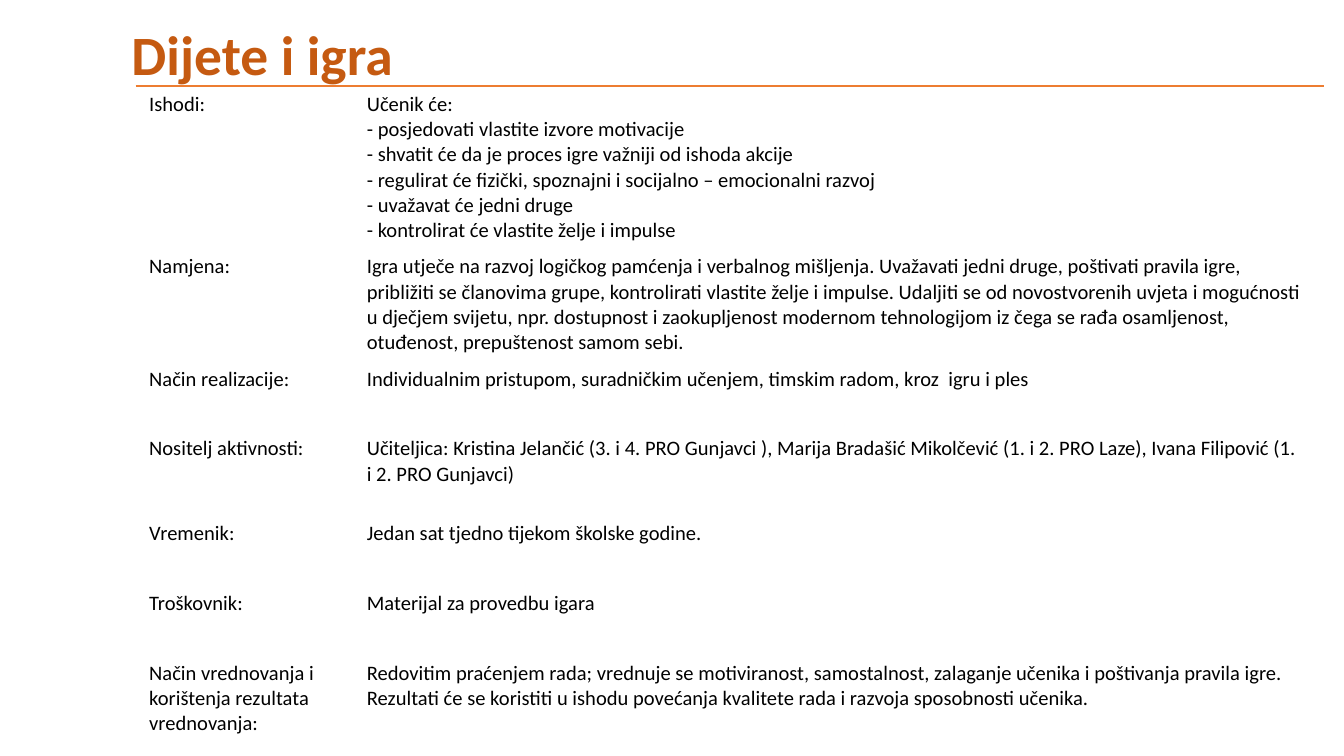
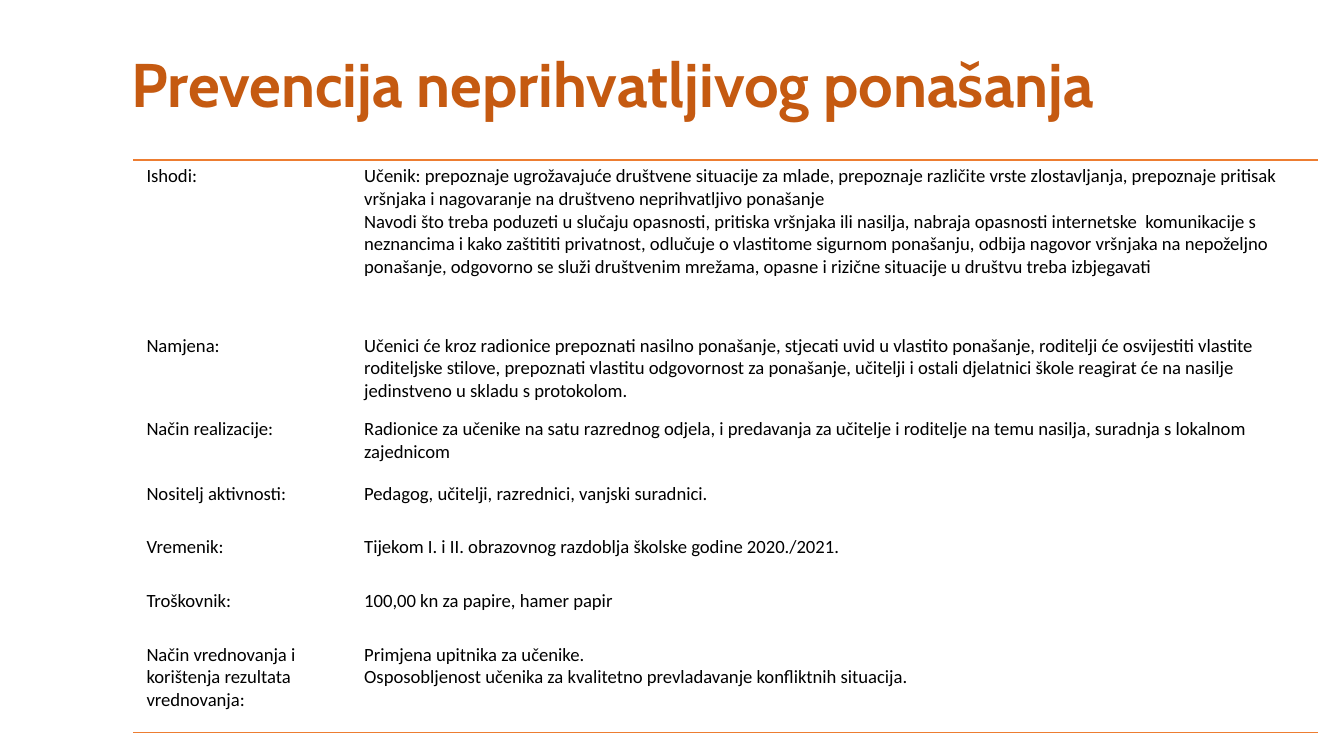
"""Build two school activity plan slides, each a title above a ruled table."""
from lxml import etree
from pptx import Presentation
from pptx import util as u
from pptx.dml.color import RGBColor
from pptx.enum import text
from pptx.oxml import ns

RUST = RGBColor(0xC5, 0x5A, 0x11)
ORANGE = RGBColor(0xED, 0x7D, 0x31)
BLACK = RGBColor(0, 0, 0)
BODY_FONT = "Calibri"
LABEL_WIDTH = 1.62
PLAIN_TABLE_STYLE = "{2D5ABB26-0587-4C30-8999-92F81FD0307C}"
NBSP = chr(160)

LABELS = [
    "Ishodi:",
    "Namjena:",
    "Način realizacije:",
    "Nositelj aktivnosti:",
    "Vremenik:",
    "Troškovnik:",
    "Način vrednovanja i korištenja rezultata vrednovanja:",
]

PLAY_DETAILS = [
    "Učenik će:\n"
    "- posjedovati vlastite izvore motivacije\n"
    "- shvatit će da je proces igre važniji od ishoda akcije\n"
    "- regulirat će fizički, spoznajni i socijalno – emocionalni razvoj\n"
    "- uvažavat će jedni druge\n"
    "- kontrolirat će vlastite želje i impulse",
    "Igra utječe na razvoj logičkog pamćenja i verbalnog mišljenja. Uvažavati jedni druge, "
    "poštivati pravila igre, približiti se članovima grupe, kontrolirati vlastite želje i impulse. "
    "Udaljiti se od novostvorenih uvjeta i mogućnosti u dječjem svijetu, npr. dostupnost i "
    "zaokupljenost modernom tehnologijom iz čega se rađa osamljenost, otuđenost, prepuštenost "
    "samom sebi.",
    "Individualnim pristupom, suradničkim učenjem, timskim radom, "
    f"kroz{NBSP} igru i ples",
    f"Učiteljica: Kristina Jelančić (3. i{NBSP}4. PRO Gunjavci ), Marija Bradašić Mikolčević "
    f"(1. i 2. PRO Laze), Ivana Filipović (1. i{NBSP}2. PRO Gunjavci)",
    "Jedan sat tjedno tijekom školske godine.",
    f"Materijal za provedbu{NBSP}igara",
    "Redovitim praćenjem rada; vrednuje se motiviranost, samostalnost, zalaganje učenika i "
    "poštivanja pravila igre.\n"
    "Rezultati će se koristiti u ishodu povećanja kvalitete rada i razvoja sposobnosti učenika.",
]

PREVENTION_DETAILS = [
    "Učenik: prepoznaje ugrožavajuće društvene situacije za mlade, prepoznaje različite vrste "
    "zlostavljanja, prepoznaje pritisak vršnjaka i nagovaranje na društveno neprihvatljivo ponašanje\n"
    "Navodi što treba poduzeti u slučaju opasnosti, pritiska vršnjaka ili nasilja, nabraja opasnosti "
    f"internetske{NBSP} komunikacije s neznancima i kako zaštititi privatnost,{NBSP}odlučuje o "
    "vlastitome sigurnom ponašanju, odbija nagovor vršnjaka na nepoželjno "
    f"ponašanje,{NBSP}odgovorno se služi društvenim mrežama, opasne i rizične situacije u društvu "
    "treba izbjegavati",
    "Učenici će kroz radionice prepoznati nasilno ponašanje, stjecati uvid u vlastito ponašanje, "
    "roditelji će osvijestiti vlastite roditeljske stilove, prepoznati vlastitu odgovornost za "
    "ponašanje, učitelji i ostali djelatnici škole reagirat će na nasilje jedinstveno u skladu s "
    "protokolom.",
    "Radionice za učenike na satu razrednog odjela, i predavanja za učitelje i roditelje na temu "
    "nasilja, suradnja s lokalnom zajednicom",
    "Pedagog, učitelji, razrednici, vanjski suradnici.",
    "Tijekom I. i II. obrazovnog razdoblja školske godine 2020./2021.",
    "100,00 kn za papire, hamer papir",
    "Primjena upitnika za učenike.\n"
    "Osposobljenost učenika za kvalitetno prevladavanje konfliktnih situacija.",
]


def style_font(paragraph, name, size, color, bold=False):
    """Set the font of a whole paragraph."""
    font = paragraph.font
    font.name, font.size, font.bold = name, u.Pt(size), bold
    font.color.rgb = color


def add_title(slide, wording, top, height, font_name, size):
    """Add the bold rust-coloured heading."""
    heading = slide.shapes.add_textbox(
        u.Inches(0.88), u.Inches(top), u.Inches(8.62), u.Inches(height)).text_frame
    heading.word_wrap = True
    heading.vertical_anchor = text.MSO_ANCHOR.MIDDLE
    heading.text = wording
    heading.paragraphs[0].line_spacing = 0.9
    style_font(heading.paragraphs[0], font_name, size, RUST, bold=True)


def add_rule(cell, edge):
    """Draw an orange line on one edge of a cell."""
    rule = etree.Element(ns.qn(f"a:{edge}"), w=str(u.Pt(1)))
    fill = etree.SubElement(rule, ns.qn("a:solidFill"))
    etree.SubElement(fill, ns.qn("a:srgbClr"), val=str(ORANGE))
    cell._tc.get_or_add_tcPr().insert(0, rule)


def fill_cell(cell, wording, size):
    """Write the wording of one cell on a clear ground."""
    cell.fill.background()
    cell.margin_left = cell.margin_right = u.Inches(0.1)
    cell.margin_top = cell.margin_bottom = u.Inches(0.04)
    cell.text = wording
    for paragraph in cell.text_frame.paragraphs:
        style_font(paragraph, BODY_FONT, size, BLACK)


def add_plan(slide, details, left, top, detail_width, row_heights, size):
    """Add the table that pairs each label with its details."""
    plan = slide.shapes.add_table(
        len(LABELS), 2, u.Inches(left), u.Inches(top),
        u.Inches(LABEL_WIDTH + detail_width), u.Inches(sum(row_heights))).table
    plan.first_row = plan.horz_banding = False
    plan._tbl.tblPr.find(ns.qn("a:tableStyleId")).text = PLAIN_TABLE_STYLE
    for column, width in zip(plan.columns, (LABEL_WIDTH, detail_width)):
        column.width = u.Inches(width)
    for row, height, *wordings in zip(plan.rows, row_heights, LABELS, details):
        row.height = u.Inches(height)
        for cell, wording in zip(row.cells, wordings):
            fill_cell(cell, wording, size)
    for column in range(2):
        add_rule(plan.cell(0, column), "lnT")
        add_rule(plan.cell(len(LABELS) - 1, column), "lnB")


def main():
    """Build and save both slides."""
    deck = Presentation()
    deck.slide_width = u.Inches(10)
    deck.slide_height = u.Inches(10 * 9 / 16)
    blank = deck.slide_layouts[6]

    play = deck.slides.add_slide(blank)
    add_plan(play, PLAY_DETAILS, 1.01, 0.64, 7.22,
             [1.2, 0.82, 0.52, 0.63, 0.52, 0.52, 0.95], 11)
    add_title(play, "Dijete i igra", 0.14, 0.57, BODY_FONT, 29.7)

    prevention = deck.slides.add_slide(blank)
    add_plan(prevention, PREVENTION_DETAILS, 0.99, 1.19, 7.2,
             [1.26, 0.62, 0.48, 0.4, 0.4, 0.4, 0.7], 10)
    add_title(prevention, "Prevencija neprihvatljivog ponašanja", 0.11, 1.09, "Cabin", 33)

    deck.save("out.pptx")


if __name__ == "__main__":
    main()
